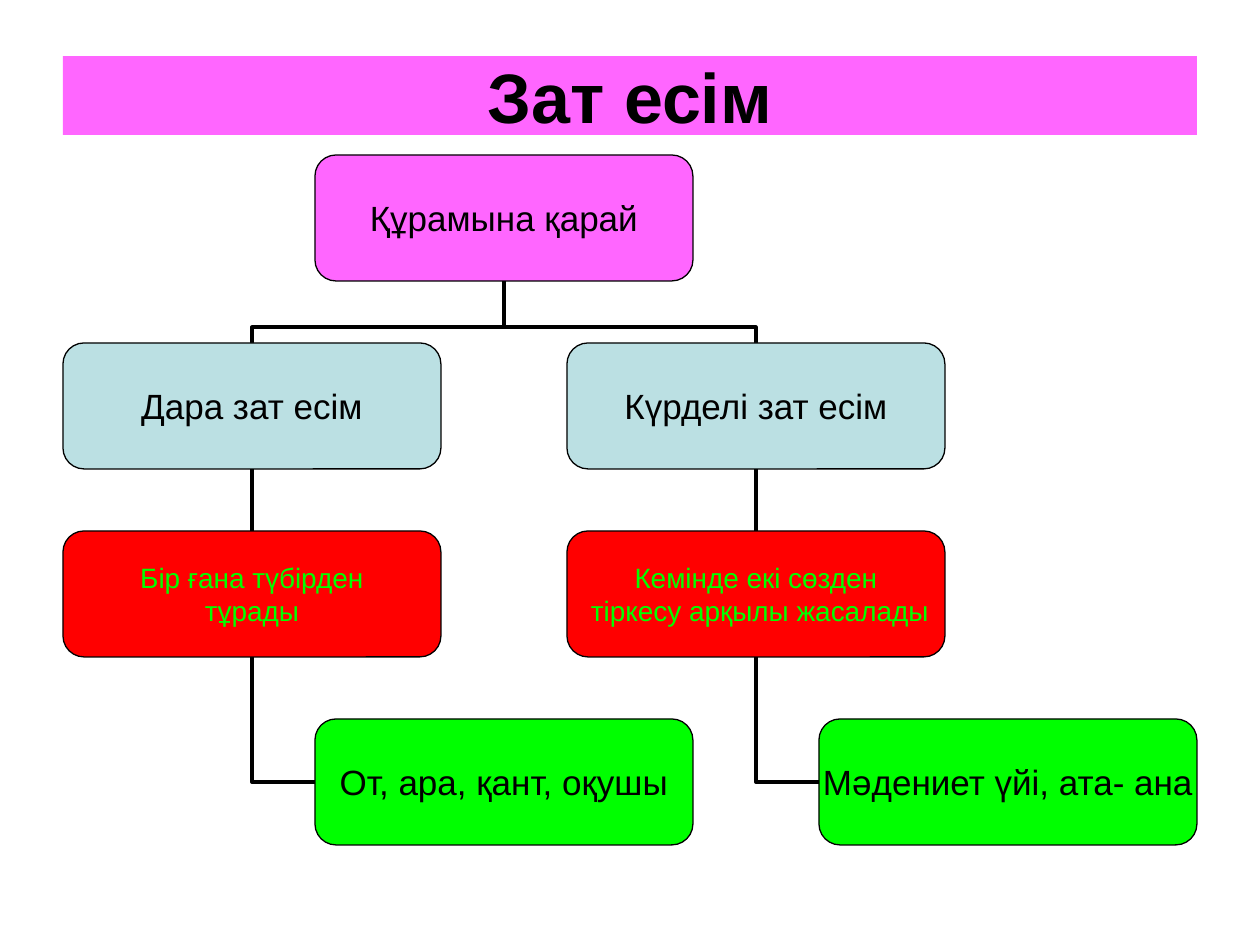
from dataclasses import dataclass

from lxml.etree import SubElement as Sub
from pptx import Presentation
from pptx.dml.color import RGBColor as Rgb
from pptx.enum.shapes import MSO_CONNECTOR as Link, MSO_SHAPE as Shape
from pptx.enum.text import MSO_ANCHOR as Anchor, PP_ALIGN as Align
from pptx.oxml.ns import qn
from pptx.util import Pt

PX = 914400 // 126


@dataclass(frozen=True)
class Theme:
    font: str = "Arial"
    ink: str = "000000"
    pink: str = "FF66FF"
    blue: str = "BBE0E3"
    red: str = "FF0000"
    green: str = "00FF00"
    head: int = 40
    body: int = 20
    small: int = 16
    rim: float = 0.75
    wire: float = 2.25


THEME = Theme()
WIDE, HIGH, STEP, GAP = 378, 126, 188, 62
COLS = [63, 315, 567, 819]
ROWS = [155 + STEP * i for i in range(4)]


def apply(item, vals):
    for name, val in vals.items():
        setattr(item, name, val)


def emu(*vals):
    return [val * PX for val in vals]


def paint(shape, fill):
    shape.shadow.inherit = False
    shape.fill.solid()
    shape.fill.fore_color.rgb = Rgb.from_string(fill)


def write(shape, text, size, ink, frame, bold=False):
    tf = shape.text_frame
    apply(tf, {"text": text, "vertical_anchor": Anchor.MIDDLE, **frame})
    for para in tf.paragraphs:
        para.alignment = Align.CENTER
        apply(para.font, {"name": THEME.font, "size": Pt(size), "bold": bold})
        para.font.color.rgb = Rgb.from_string(ink)


def add_title(slide, text):
    bar = slide.shapes.add_shape(Shape.RECTANGLE, *emu(63, 56, 1134, 79))
    paint(bar, THEME.pink)
    bar.line.fill.background()
    write(bar, text, THEME.head, THEME.ink, {"word_wrap": True}, True)


def add_node(slide, col, row, text, fill, size=THEME.body, ink=THEME.ink):
    node = slide.shapes.add_shape(
        Shape.ROUNDED_RECTANGLE, *emu(COLS[col], ROWS[row], WIDE, HIGH))
    node.adjustments[0] = 0.167
    paint(node, fill)
    node.line.color.rgb = Rgb.from_string(THEME.ink)
    node.line.width = Pt(THEME.rim)
    sides = ("left", "top", "right", "bottom")
    frame = {f"margin_{side}": 0 for side in sides}
    write(node, text, size, ink, {**frame, "word_wrap": False})
    return node


def add_wire(slide, kind, left, top, wide, high):
    wire = slide.shapes.add_connector(
        kind, *emu(left, top, left + wide, top + high))
    wire.line.color.rgb = Rgb.from_string(THEME.ink)
    wire.line.width = Pt(THEME.wire)
    Sub(wire._element.spPr, qn("a:effectLst"))
    return wire


def add_bend(slide, box, turn, flip=False, adj=None):
    props = add_wire(slide, Link.ELBOW, *box)._element.spPr
    frame = props.find(qn("a:xfrm"))
    frame.set("rot", str(turn * 60000))
    if flip:
        frame.set("flipH", "1")
    geom = props.find(qn("a:prstGeom"))
    geom.set("prst", "bentConnector3" if adj else "bentConnector2")
    if adj:
        Sub(geom.find(qn("a:avLst")), qn("a:gd"),
            name="adj1", fmla=f"val {adj}")


def add_fork(slide, col, turn, flip):
    half = (COLS[1] - COLS[col]) // 2
    span = abs(half) * 2
    mid = COLS[1] + WIDE // 2 - half
    low = ROWS[1] - GAP // 2
    box = (mid - GAP // 2, low - span // 2, GAP, span)
    add_bend(slide, box, turn, flip, 25200)


def add_branch(slide, col, kind, rule, case):
    top = add_node(slide, col, 1, kind, THEME.blue)
    low = add_node(slide, col, 2, rule, THEME.red, THEME.small, THEME.green)
    add_node(slide, col + 1, 3, case, THEME.green)
    mid = COLS[col] + WIDE // 2
    wire = add_wire(slide, Link.STRAIGHT, mid, ROWS[2], 0, -GAP)
    wire.begin_connect(low, 0)
    wire.end_connect(top, 2)
    base = ROWS[2] + HIGH
    box = (mid, base, COLS[col + 1] - mid, ROWS[3] + HIGH // 2 - base)
    add_bend(slide, box, 180)


def main():
    deck = Presentation()
    apply(deck, {"slide_width": 1260 * PX, "slide_height": 945 * PX})
    slide = deck.slides.add_slide(deck.slide_layouts[6])
    add_title(slide, "Зат есім")
    add_fork(slide, 0, 270, False)
    add_fork(slide, 2, 90, True)
    add_node(slide, 1, 0, "Құрамына қарай", THEME.pink)
    add_branch(slide, 0, "Дара зат есім", "Бір ғана түбірден\nтұрады",
               "От, ара, қант, оқушы")
    add_branch(slide, 2, "Күрделі зат есім",
               "Кемінде екі сөзден\n тіркесу арқылы жасалады",
               "Мәдениет үйі, ата- ана")
    deck.save("out.pptx")


if __name__ == "__main__":
    main()
